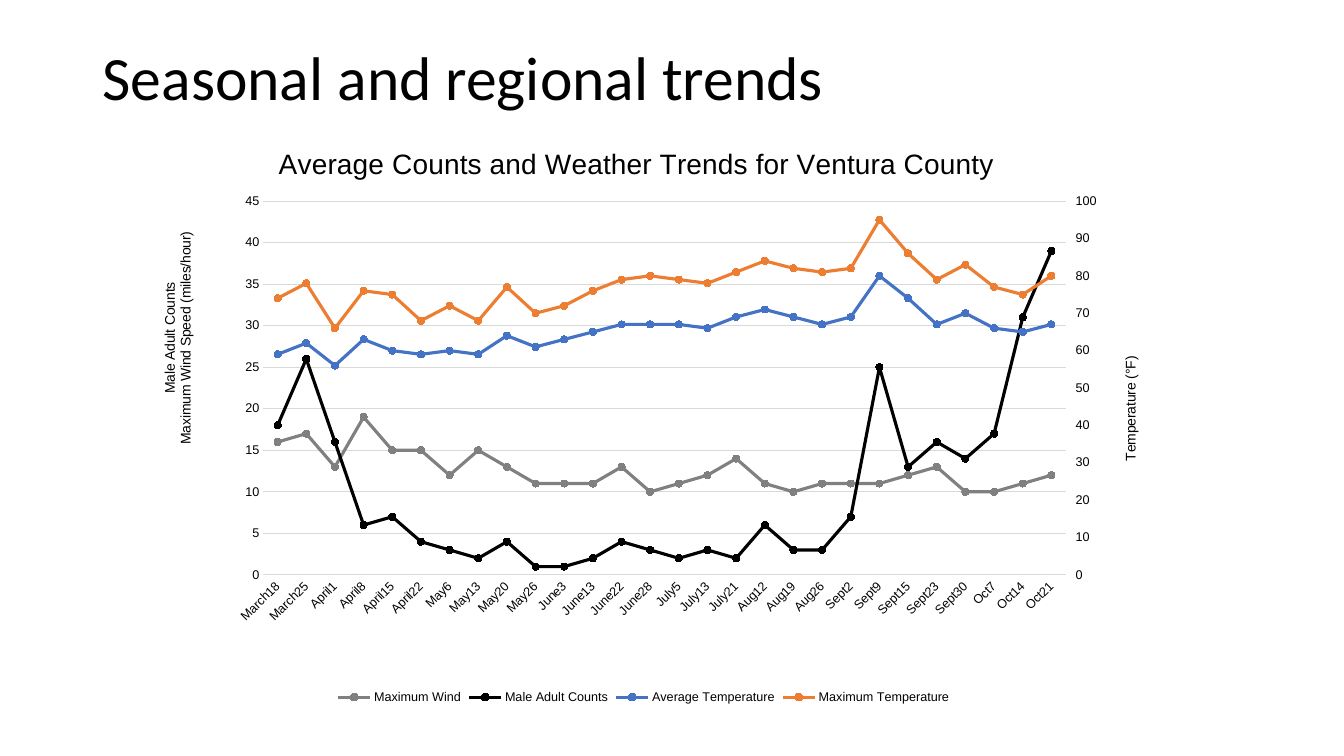
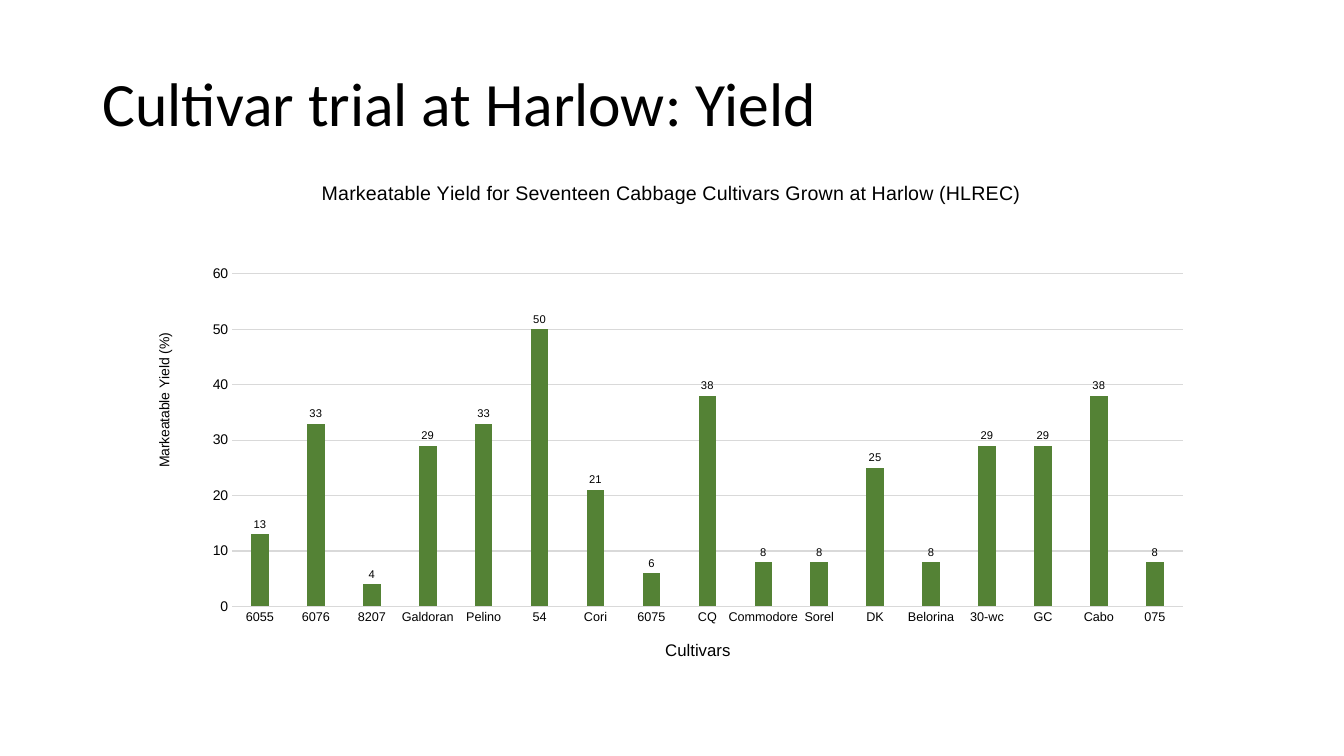
import copy
import dataclasses

import lxml.etree
import pptx
import pptx.chart.axis
import pptx.chart.data
import pptx.dml.color
import pptx.enum.chart
import pptx.enum.text
import pptx.oxml.ns
import pptx.util

Inches = pptx.util.Inches
Pt = pptx.util.Pt
qn = pptx.oxml.ns.qn
TICK = pptx.enum.chart.XL_TICK_MARK
KIND = pptx.enum.chart.XL_CHART_TYPE


@dataclasses.dataclass(frozen=True)
class Theme:
    ink: str = "000000"
    grid: str = "D9D9D9"
    wind: str = "808080"
    mean: str = "4472C4"
    peak: str = "ED7D31"
    crop: str = "548235"
    head: str = "Calibri"
    body: str = "Arial"
    title: int = 44
    large: int = 20
    mid: int = 14
    axis: int = 12
    base: int = 10
    small: int = 9
    tiny: int = 8
    thin: float = 0.75
    thick: float = 2.25


THEME = Theme()

DATES = (
    "March18 March25 April1 April8 April15 April22 May6 May13 May20 May26 "
    "June3 June13 June22 June28 July5 July13 July21 Aug12 Aug19 Aug26 "
    "Sept2 Sept9 Sept15 Sept23 Sept30 Oct7 Oct14 Oct21"
).split()
TRENDS = {
    "Maximum Wind": [16, 17, 13, 19, 15, 15, 12, 15, 13, 11, 11, 11, 13, 10,
                     11, 12, 14, 11, 10, 11, 11, 11, 12, 13, 10, 10, 11, 12],
    "Male Adult Counts": [18, 26, 16, 6, 7, 4, 3, 2, 4, 1, 1, 2, 4, 3,
                          2, 3, 2, 6, 3, 3, 7, 25, 13, 16, 14, 17, 31, 39],
    "Average Temperature": [59, 62, 56, 63, 60, 59, 60, 59, 64, 61, 63, 65, 67, 67,
                            67, 66, 69, 71, 69, 67, 69, 80, 74, 67, 70, 66, 65, 67],
    "Maximum Temperature": [74, 78, 66, 76, 75, 68, 72, 68, 77, 70, 72, 76, 79, 80,
                            79, 78, 81, 84, 82, 81, 82, 95, 86, 79, 83, 77, 75, 80],
}
HUES = [THEME.wind, THEME.ink, THEME.mean, THEME.peak]
CROPS = (
    "6055 6076 8207 Galdoran Pelino 54 Cori 6075 CQ Commodore Sorel DK "
    "Belorina 30-wc GC Cabo 075"
).split()
YIELD = {"Series 1": [13, 33, 4, 29, 33, 50, 21, 6, 38, 8, 8, 25, 8, 29, 29, 38, 8]}


def apply(item, **values):
    for name, value in values.items():
        setattr(item, name, value)


def tint(code):
    return pptx.dml.color.RGBColor.from_string(code)


def style(font, size, face=THEME.body):
    apply(font, size=Pt(size), name=face, bold=False)
    font.color.rgb = tint(THEME.ink)


def fill(item, code):
    item.fill.solid()
    item.fill.fore_color.rgb = tint(code)


def stroke(line, code, width):
    line.color.rgb = tint(code)
    line.width = Pt(width)


def place(node, **spots):
    """Fix a chart part at percentages of the chart's size."""
    layout = node.find(qn("c:layout"))
    if layout is None:
        layout = lxml.etree.Element(qn("c:layout"))
        node.insert(0, layout)
    manual = lxml.etree.SubElement(layout, qn("c:manualLayout"))
    marks = {"xMode": "edge", "yMode": "edge"}
    if "w" in spots:
        marks = {"layoutTarget": "inner", **marks}
    marks.update({name: round(value / 100, 4) for name, value in spots.items()})
    for name, value in marks.items():
        lxml.etree.SubElement(manual, qn(f"c:{name}")).set("val", str(value))


def turn(text, angle):
    body = text.find(qn("a:bodyPr"))
    body.set("rot", str(angle * 60000))
    body.set("vert", "horz")


def label(owner, text, size, x, y, angle=0):
    """Give a chart or an axis its title."""
    owner.has_title = True
    title = owner.chart_title if hasattr(owner, "chart_title") else owner.axis_title
    frame = title.text_frame
    frame.text = text
    for para in frame.paragraphs:
        style(para.font, size)
        for run in para.runs:
            style(run.font, size)
    turn(frame._txBody, angle)
    place(title._element, x=x, y=y)


def add_page(deck, text, top):
    slide = deck.slides.add_slide(deck.slide_layouts[6])
    box = slide.shapes.add_textbox(Inches(0.92), Inches(top), Inches(11.5), Inches(1.45))
    frame = box.text_frame
    apply(frame, word_wrap=True, vertical_anchor=pptx.enum.text.MSO_ANCHOR.MIDDLE)
    para = frame.paragraphs[0]
    para.line_spacing = 0.9
    run = para.add_run()
    run.text = text
    style(run.font, THEME.title, THEME.head)
    return slide


def add_chart(slide, kind, area, cats, rows, plot):
    data = pptx.chart.data.CategoryChartData()
    data.categories = cats
    for name, values in rows.items():
        data.add_series(name, values)
    chart = slide.shapes.add_chart(kind, *map(Inches, area), data).chart
    style(chart.font, THEME.base, THEME.head)
    chart.has_legend = False
    chart.plots[0].vary_by_categories = False
    place(chart._chartSpace.chart.plotArea, **dict(zip("xywh", plot)))
    return chart


def set_cats(axis):
    apply(axis, major_tick_mark=TICK.NONE, minor_tick_mark=TICK.NONE)
    style(axis.tick_labels.font, THEME.small)
    stroke(axis.format.line, THEME.grid, THEME.thin)


def set_scale(axis, top, step, size, grid=True):
    apply(axis, minimum_scale=0, maximum_scale=top, major_unit=step,
          major_tick_mark=TICK.NONE if grid else TICK.OUTSIDE,
          minor_tick_mark=TICK.NONE, has_major_gridlines=grid)
    style(axis.tick_labels.font, size)
    apply(axis.tick_labels, number_format="0", number_format_is_linked=False)
    axis.format.line.fill.background()
    if grid:
        stroke(axis.major_gridlines.format.line, THEME.grid, THEME.thin)


def split(chart, first):
    """Move the series from index first on to a right axis; return both value axes."""
    area = chart._chartSpace.chart.plotArea
    left = area.find(qn("c:lineChart"))
    right = copy.deepcopy(left)
    for group, keep in ((left, range(first)), (right, range(first, len(chart.series)))):
        for index, row in enumerate(group.findall(qn("c:ser"))):
            if index not in keep:
                group.remove(row)
    left.addnext(right)
    cats, vals = area.find(qn("c:catAx")), area.find(qn("c:valAx"))
    pair = copy.deepcopy(vals), copy.deepcopy(cats)
    old = [axis.find(qn("c:axId")).get("val") for axis in (cats, vals)]
    fresh = dict(zip(old, ("5001", "5002")))
    for node in (right, *pair):
        for tag in ("c:axId", "c:crossAx"):
            for mark in node.findall(qn(tag)):
                mark.set("val", fresh[mark.get("val")])
    vals.addnext(pair[0])
    pair[0].addnext(pair[1])
    pair[0].find(qn("c:axPos")).set("val", "r")
    pair[0].find(qn("c:crosses")).set("val", "max")
    pptx.chart.axis.CategoryAxis(pair[1]).visible = False
    return [pptx.chart.axis.ValueAxis(node) for node in (vals, pair[0])]


def draw_trends(deck):
    slide = add_page(deck, "Seasonal and regional trends", 0.07)
    chart = add_chart(slide, KIND.LINE_MARKERS, (1.23, 1.27, 10.31, 5.76),
                      DATES, TRENDS, (13.4, 12.6, 77.2, 64.4))
    for row, hue in zip(chart.series, HUES):
        row.smooth = False
        stroke(row.format.line, hue, THEME.thick)
        apply(row.marker, style=pptx.enum.chart.XL_MARKER_STYLE.CIRCLE, size=5)
        fill(row.marker.format, hue)
        stroke(row.marker.format.line, hue, THEME.thin)
    left, right = split(chart, 2)
    set_cats(chart.category_axis)
    turn(chart.category_axis._element.find(qn("c:txPr")), -45)
    set_scale(left, 45, 5, THEME.small)
    set_scale(right, 100, 10, THEME.small, grid=False)
    label(chart, "Average Counts and Weather Trends for Ventura County",
          THEME.large, 14.4, 2.3)
    label(left, "Male Adult Counts\nMaximum Wind Speed (miles/hour)",
          THEME.base, 3.2, 17.3, -90)
    label(right, "Temperature (°F)", THEME.base, 95.7, 38.9, -90)
    chart.has_legend = True
    apply(chart.legend, include_in_layout=False,
          position=pptx.enum.chart.XL_LEGEND_POSITION.BOTTOM)
    style(chart.legend.font, THEME.small)


def draw_yield(deck):
    slide = add_page(deck, "Cultivar trial at Harlow: Yield", 0.33)
    chart = add_chart(slide, KIND.COLUMN_CLUSTERED, (1.24, 1.64, 10.94, 5.86),
                      CROPS, YIELD, (9.7, 18.4, 86.2, 56.3))
    plot = chart.plots[0]
    apply(plot, gap_width=219, overlap=-27, has_data_labels=True)
    fill(plot.series[0].format, THEME.crop)
    apply(plot.data_labels, show_value=True, number_format="0",
          number_format_is_linked=False,
          position=pptx.enum.chart.XL_LABEL_POSITION.OUTSIDE_END)
    style(plot.data_labels.font, THEME.tiny)
    set_cats(chart.category_axis)
    set_scale(chart.value_axis, 60, 10, THEME.base)
    label(chart, "Markeatable Yield for Seventeen Cabbage Cultivars Grown at Harlow (HLREC)",
          THEME.mid, 17.5, 2)
    label(chart.category_axis, "Cultivars", THEME.axis, 48.7, 79.8)
    label(chart.value_axis, "Markeatable Yield (%)", THEME.base, 2.5, 28, -90)


def main():
    deck = pptx.Presentation()
    apply(deck, slide_width=Inches(13.33), slide_height=Inches(7.5))
    draw_trends(deck)
    draw_yield(deck)
    deck.save("out.pptx")


if __name__ == "__main__":
    main()
